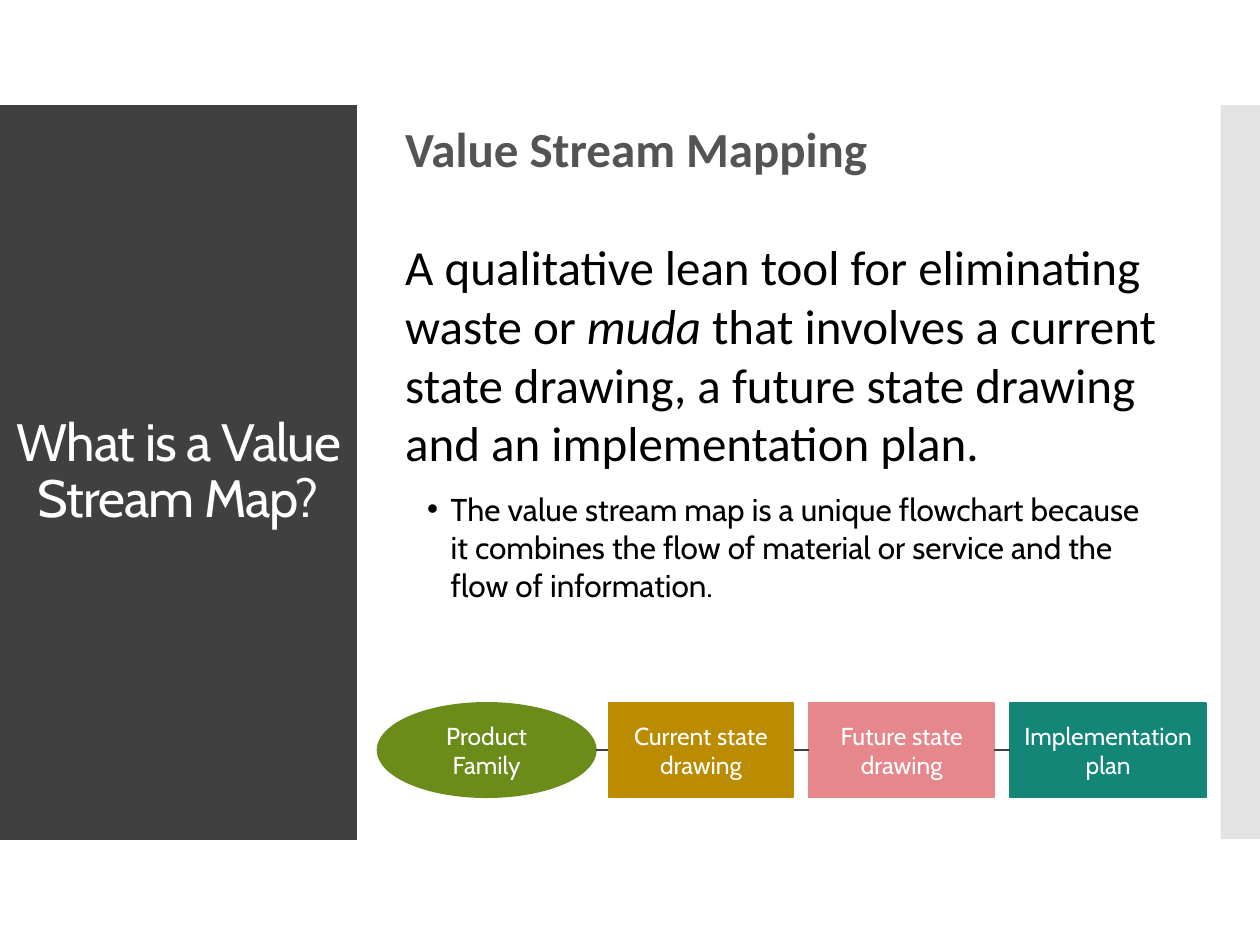
from itertools import pairwise

from pptx import Presentation
from pptx.dml.color import RGBColor
from pptx.enum.shapes import MSO_CONNECTOR, MSO_SHAPE
from pptx.enum.text import MSO_ANCHOR, PP_ALIGN
from pptx.oxml.ns import qn
from pptx.util import Pt
from lxml.etree import SubElement

WHITE = RGBColor(0xFF, 0xFF, 0xFF)
BLACK = RGBColor(0, 0, 0)
CHARCOAL = RGBColor(0x40, 0x40, 0x40)
GREY = RGBColor(0x54, 0x54, 0x54)
SILVER = RGBColor(0xC8, 0xC8, 0xC8)
GREEN = RGBColor(0x6C, 0x8C, 0x1A)
OCHRE = RGBColor(0xBB, 0x8B, 0x00)
PINK = RGBColor(0xE6, 0x88, 0x8B)
TEAL = RGBColor(0x13, 0x86, 0x77)

TITLE = {"name": "Cabin", "size": Pt(30), "color": WHITE}
HEADING = {"name": "Calibri", "size": Pt(28), "color": GREY, "bold": True}
BODY = {"name": "Calibri", "size": Pt(28), "color": BLACK}
BULLET = {"name": "Cabin", "size": Pt(18), "color": BLACK}
STEP = {"name": "Cabin", "size": Pt(14), "color": WHITE}


def add_run(p, text, fmt):
    r = p.add_run()
    r.text = text
    for key, value in fmt.items():
        if key == "color":
            r.font.color.rgb = value
        else:
            setattr(r.font, key, value)
    return r


def add_block(s, kind, box, color):
    sp = s.shapes.add_shape(kind, *map(Pt, box))
    sp.shadow.inherit = False
    sp.fill.solid()
    sp.fill.fore_color.rgb = color
    sp.line.fill.background()
    return sp


def add_label(sp, text, fmt):
    tf = sp.text_frame
    tf.word_wrap = True
    tf.vertical_anchor = MSO_ANCHOR.MIDDLE
    p = tf.paragraphs[0]
    p.alignment = PP_ALIGN.CENTER
    return p, add_run(p, text, fmt)


def add_text_frame(s, box):
    tf = s.shapes.add_textbox(*map(Pt, box)).text_frame
    tf.word_wrap = True
    return tf


def add_title_panel(s, box):
    sp = add_block(s, MSO_SHAPE.RECTANGLE, box, CHARCOAL)
    p, r = add_label(sp, "What is a Value Stream Map?", TITLE)
    p.line_spacing = 0.9
    r.font._element.set("spc", "-60")


def add_edge_band(s, box):
    sp = add_block(s, MSO_SHAPE.RECTANGLE, box, SILVER)
    color = sp._element.spPr.find(qn("a:solidFill"))[0]
    SubElement(color, qn("a:alpha"), val="50000")


def add_definition(s, box):
    tf = add_text_frame(s, box)
    add_run(tf.paragraphs[0], "Value Stream Mapping", HEADING)
    p = tf.add_paragraph()
    p.space_before = Pt(34)
    add_run(p, "A qualitative lean tool for eliminating waste or ", BODY)
    add_run(p, "muda", BODY | {"italic": True})
    add_run(p, " that involves a current state drawing, a future state "
               "drawing and an implementation plan.", BODY)


def add_bullet(s, box):
    p = add_text_frame(s, box).paragraphs[0]
    add_run(p, "The value stream map is a unique flowchart because it combines "
               "the flow of material or service and the flow of information.", BULLET)
    pPr = p._p.get_or_add_pPr()
    indent = Pt(13.5)
    pPr.set("marL", str(indent))
    pPr.set("indent", str(-indent))
    SubElement(pPr, qn("a:buFont"), typeface="Arial")
    SubElement(pPr, qn("a:buChar"), char="•")


def add_process(s, box):
    left, top, width, height = box
    # Each step: shape, label, colour, offset from the left, width
    steps = [
        (MSO_SHAPE.OVAL, "Product Family", GREEN, 0, 124.8),
        (MSO_SHAPE.RECTANGLE, "Current state drawing", OCHRE, 132, 105.8),
        (MSO_SHAPE.RECTANGLE, "Future state drawing", PINK, 246.7, 105.8),
        (MSO_SHAPE.RECTANGLE, "Implementation plan", TEAL, 361.5, width - 361.5),
    ]
    shapes = []
    for kind, text, color, dx, w in steps:
        sp = add_block(s, kind, (left + dx, top, w, height), color)
        sp.line.color.rgb = color
        sp.line.width = Pt(0.85)
        add_label(sp, text, STEP)
        sp.text_frame.margin_left = sp.text_frame.margin_right = Pt(6)
        shapes.append(sp)

    # Links between neighbouring steps
    for a, b in pairwise(shapes):
        y = Pt(top + height / 2)
        cxn = s.shapes.add_connector(MSO_CONNECTOR.STRAIGHT, a.left + a.width, y, b.left, y)
        cxn.line.color.rgb = CHARCOAL
        cxn.line.width = Pt(0.75)
        SubElement(cxn._element.spPr, qn("a:effectLst"))


def main():
    prs = Presentation()
    prs.slide_width, prs.slide_height = Pt(720), Pt(540)
    s = prs.slides.add_slide(prs.slide_layouts[6])

    add_edge_band(s, (697.5, 60, 22.5, 419.5))
    add_title_panel(s, (0, 60, 204, 420))
    add_definition(s, (224.5, 64, 468, 211))
    add_process(s, (215.7, 401.6, 473.6, 54))
    add_bullet(s, (237, 276.5, 429, 116.6))

    prs.save("out.pptx")


if __name__ == "__main__":
    main()
